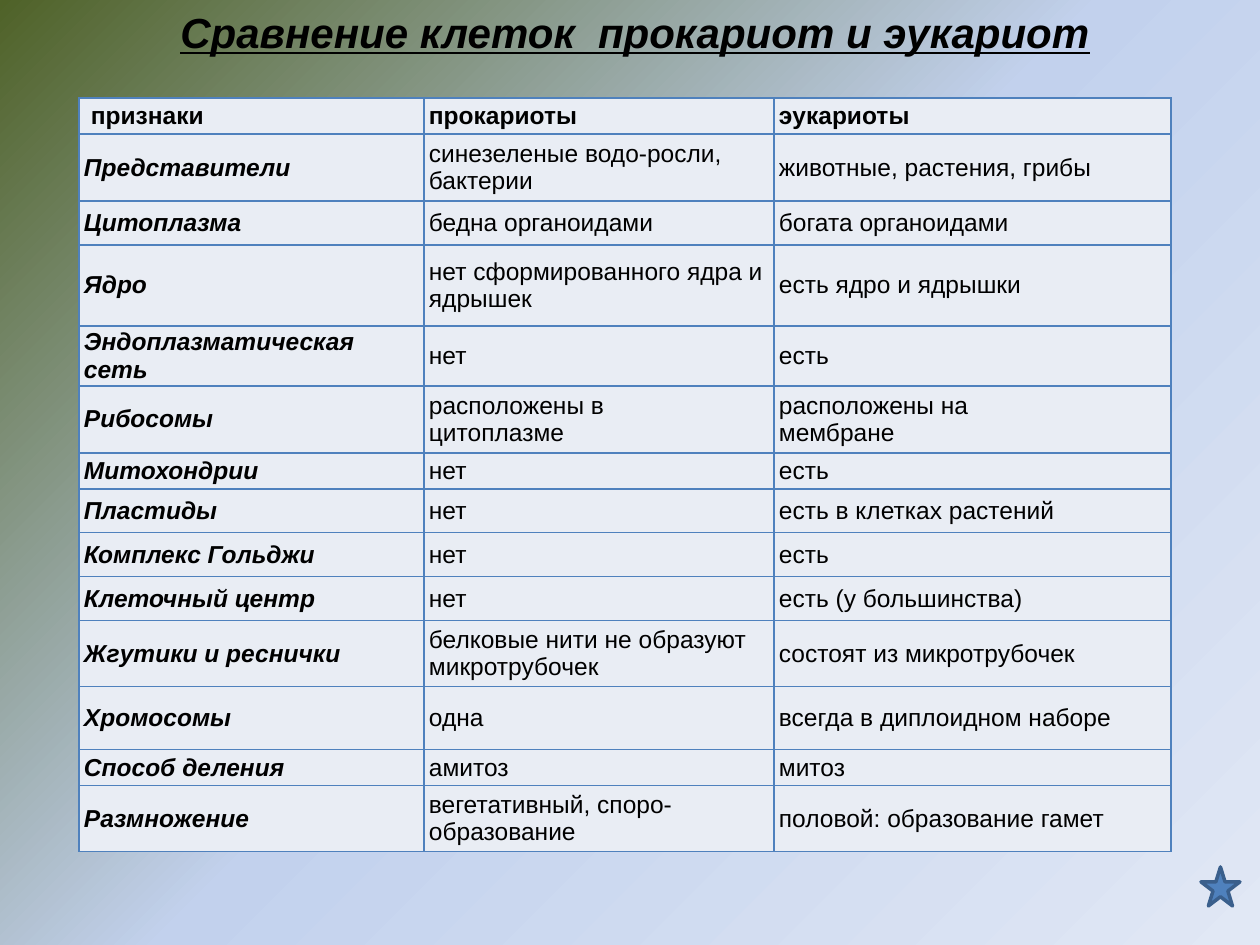
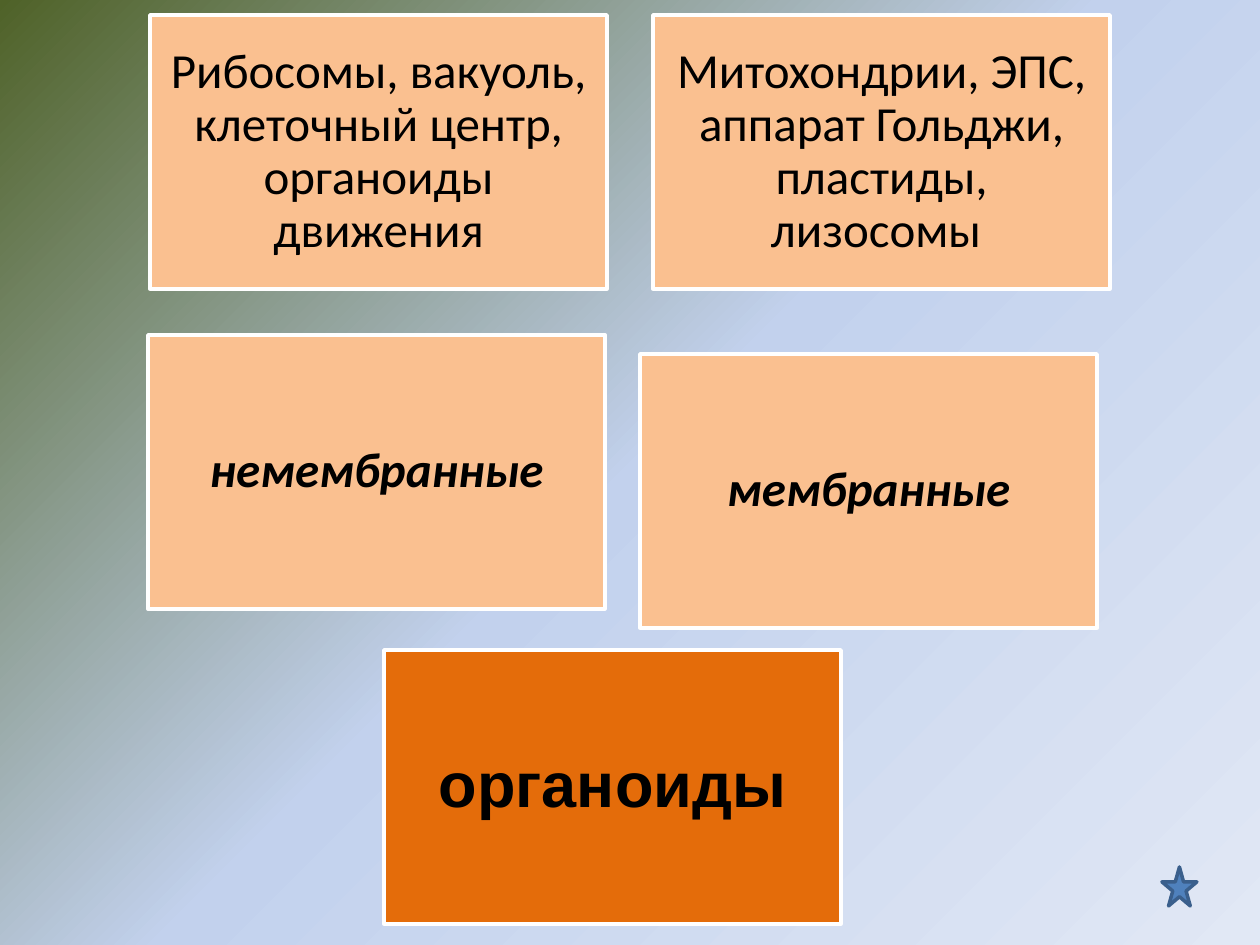
import copy

import lxml.etree
import pptx
import pptx.dml.color
import pptx.enum.shapes
import pptx.enum.text
import pptx.oxml.ns
import pptx.util

EMU_PER_PX = 914400 / 126
INK = "000000"
BLUE = "4F81BD"
BLUE_EDGE = "3A5F8C"
CELL_FILL = "E9EDF4"
PEACH = "FAC090"
ORANGE = "E46C0A"
WHITE = "FFFFFF"
BACKGROUND_STOPS = [(0, "4F6228"), (0.5, "C2D1ED"), (1, "E1E8F5")]

CENTER = pptx.enum.text.PP_ALIGN.CENTER
JUSTIFY = pptx.enum.text.PP_ALIGN.JUSTIFY
MIDDLE = pptx.enum.text.MSO_ANCHOR.MIDDLE
SHAPES = pptx.enum.shapes.MSO_SHAPE
qn = pptx.oxml.ns.qn


def px(*lengths):
    return [pptx.util.Emu(round(length * EMU_PER_PX)) for length in lengths]


def paint(target, color):
    """Give a font, fill or line a solid colour from a hex string."""
    if hasattr(target, "solid"):
        target.solid()
    holder = target.fore_color if hasattr(target, "fore_color") else target.color
    holder.rgb = pptx.dml.color.RGBColor.from_string(color)


deck = pptx.Presentation()
deck.slide_width, deck.slide_height = px(1260, 945)
blank = deck.slide_layouts[6]
comparison, organelles = [deck.slides.add_slide(blank) for _ in range(2)]

# Shared diagonal background
for page in (comparison, organelles):
    fill = page.background.fill
    fill.gradient()
    fill.gradient_angle = 315
    stop_list = page.element.find(".//" + qn("a:gsLst"))
    stop_list.append(copy.deepcopy(stop_list[-1]))
    for stop, (position, color) in zip(fill.gradient_stops, BACKGROUND_STOPS):
        stop.position = position
        paint(stop, color)

# Comparison table
COLUMN_WIDTHS = [345, 350, 397]
ROWS = [
    (36, " признаки", "прокариоты", "эукариоты"),
    (67, "Представители", "синезеленые водо-росли, бактерии", "животные, растения, грибы"),
    (44, "Цитоплазма", "бедна органоидами", "богата органоидами"),
    (81, "Ядро", "нет сформированного ядра и ядрышек", "есть ядро и ядрышки"),
    (60, "Эндоплазматическая сеть", "нет", "есть"),
    (67, "Рибосомы", "расположены в \nцитоплазме", "расположены на \nмембране"),
    (36, "Митохондрии", "нет", "есть"),
    (44, "Пластиды", "нет", "есть в клетках растений"),
    (44, "Комплекс Гольджи", "нет", "есть"),
    (44, "Клеточный центр", "нет", "есть (у большинства)"),
    (66, "Жгутики и реснички", "белковые нити не образуют микротрубочек", "состоят из микротрубочек"),
    (63, "Хромосомы", "одна", "всегда в диплоидном наборе"),
    (36, "Способ деления", "амитоз", "митоз"),
    (66, "Размножение", "вегетативный, споро- образование", "половой: образование гамет"),
]
table_height = sum(row[0] for row in ROWS)
table = comparison.shapes.add_table(
    len(ROWS), len(COLUMN_WIDTHS), *px(79, 98, sum(COLUMN_WIDTHS), table_height)
).table
table.horz_banding = False
table.first_row = False
for column, width in zip(table.columns, px(*COLUMN_WIDTHS)):
    column.width = width

for row_index, (height, *texts) in enumerate(ROWS):
    table.rows[row_index].height = px(height)[0]
    for column_index, text in enumerate(texts):
        cell = table.cell(row_index, column_index)
        cell.margin_left, cell.margin_right, cell.margin_top, cell.margin_bottom = px(5, 5, 2, 2)
        cell.vertical_anchor = MIDDLE
        paint(cell.fill, CELL_FILL)
        cell.text_frame.text = text
        is_header, is_feature = row_index == 0, column_index == 0
        for para in cell.text_frame.paragraphs:
            if "\n" in text:
                para.alignment = JUSTIFY
            for span in para.runs:
                span.font.name = "Arial"
                span.font.size = pptx.util.Pt(14)
                span.font.bold = is_header or is_feature
                span.font.italic = is_feature and not is_header
                paint(span.font, INK)
        properties = cell._tc.get_or_add_tcPr()
        for order, side in enumerate(["a:lnL", "a:lnR", "a:lnT", "a:lnB"]):
            border = lxml.etree.Element(qn(side), w="12700")
            border_fill = lxml.etree.SubElement(border, qn("a:solidFill"))
            lxml.etree.SubElement(border_fill, qn("a:srgbClr"), val=BLUE)
            properties.insert(order, border)

# Title
title = comparison.shapes.add_textbox(*px(98, 0, 1074, 64))
title.text_frame.word_wrap = True
title.text_frame.text = "Сравнение клеток  прокариот и эукариот"
para = title.text_frame.paragraphs[0]
para.alignment = CENTER
span = para.runs[0]
span.font.name = "Arial"
span.font.size = pptx.util.Pt(24)
span.font.bold = span.font.italic = span.font.underline = True
paint(span.font, INK)

# Organelle boxes: left, top, text, fill, font, size, bold, italic, inset
ORGANELLE_BOXES = [
    (150, 15, "Рибосомы, вакуоль, клеточный центр, органоиды движения",
     PEACH, "Calibri", 28, False, False, 15),
    (653, 15, "Митохондрии, ЭПС, аппарат Гольджи, пластиды, лизосомы ",
     PEACH, "Calibri", 28, False, False, 15),
    (148, 335, "немембранные", PEACH, "Calibri", 28, True, True, 15),
    (640, 354, "мембранные", PEACH, "Calibri", 28, True, True, 15),
    (384, 650, "органоиды", ORANGE, "Arial", 36, True, False, 19),
]
for left, top, text, color, font, size, bold, italic, inset in ORGANELLE_BOXES:
    box = organelles.shapes.add_shape(SHAPES.RECTANGLE, *px(left, top, 457, 274))
    box.shadow.inherit = False
    paint(box.fill, color)
    paint(box.line, WHITE)
    box.line.width = pptx.util.Pt(2)
    frame = box.text_frame
    frame.word_wrap = True
    frame.vertical_anchor = MIDDLE
    frame.margin_left, frame.margin_right, frame.margin_top, frame.margin_bottom = px(*[inset] * 4)
    frame.text = text
    para = frame.paragraphs[0]
    para.alignment = CENTER
    para.line_spacing = 0.9
    span = para.runs[0]
    span.font.name = font
    span.font.size = pptx.util.Pt(size)
    span.font.bold = bold
    span.font.italic = italic
    paint(span.font, INK)

# Corner stars
for page, left, width in [(comparison, 1201, 39), (organelles, 1162, 35)]:
    star = page.shapes.add_shape(SHAPES.STAR_5_POINT, *px(left, 867, width, 39))
    star.shadow.inherit = False
    paint(star.fill, BLUE)
    paint(star.line, BLUE_EDGE)
    star.line.width = pptx.util.Pt(2)

deck.save("out.pptx")
